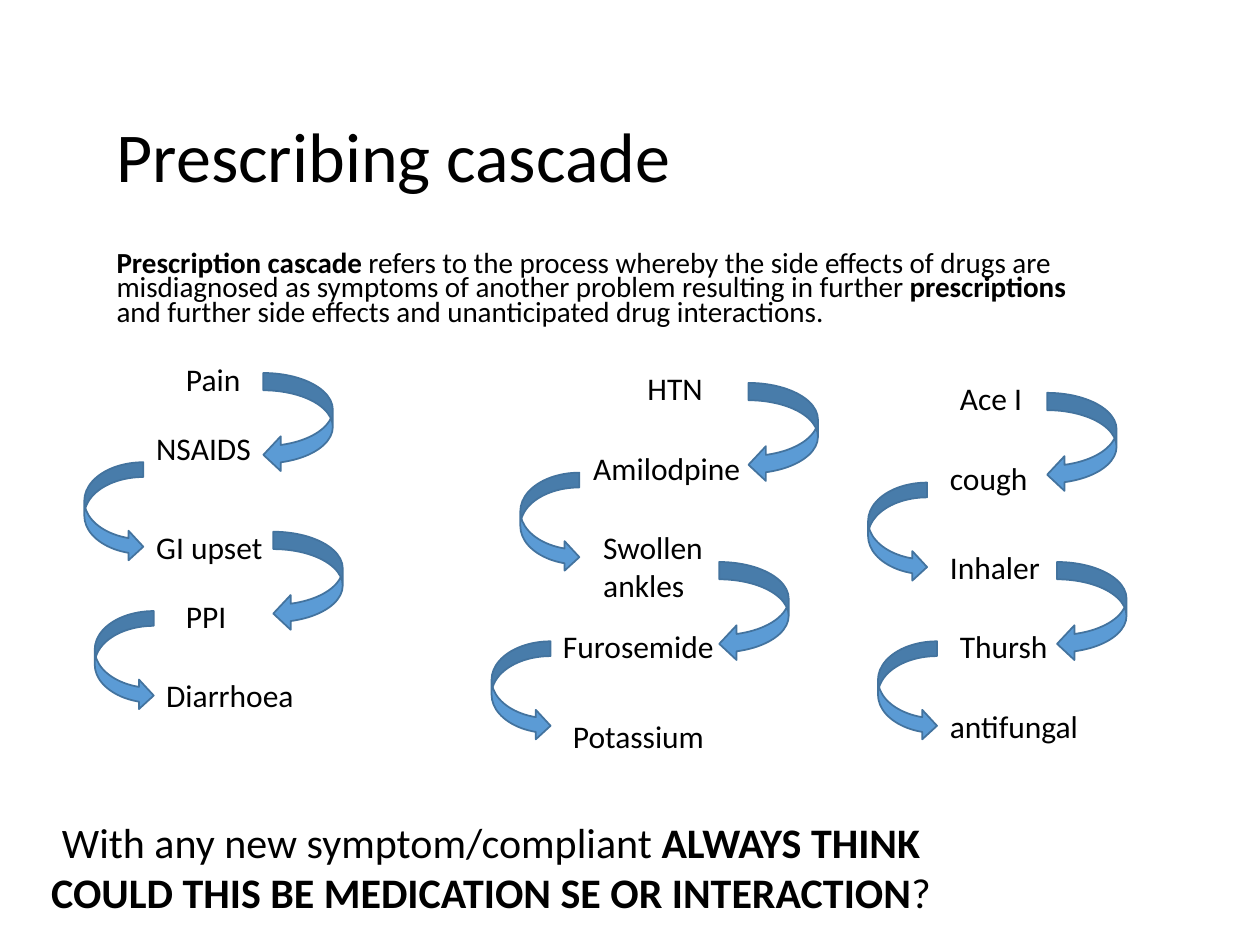
from dataclasses import dataclass

from pptx import Presentation, util as u
from pptx.dml.color import RGBColor
from pptx.enum import shapes, text

BLACK = RGBColor(0, 0, 0)
BLUE = RGBColor(0x5B, 0x9B, 0xD5)
EDGE = RGBColor(0x43, 0x73, 0x9E)
FONT = "Calibri"
ARROW_H = 2.0
LEFT, CENTER = text.PP_ALIGN.LEFT, text.PP_ALIGN.CENTER


@dataclass
class Step:
    """One stage of a cascade; lengths in cm."""
    words: str
    x: float
    y: float
    w: float = 3.8
    h: float = 1.02
    align: text.PP_ALIGN = LEFT


@dataclass
class Turn:
    """A curved arrow from one stage to the next; lengths in cm."""
    x: float
    y: float
    right: bool = False


STEPS = [
    Step("Pain", 3.5, 7.14),
    Step("NSAIDS", 2.9, 8.53, 3.6),
    Step("GI upset", 2.9, 10.52),
    Step("PPI", 3.5, 11.91),
    Step("Diarrhoea", 3.1, 13.51),
    Step("HTN", 11.71, 7.32, align=CENTER),
    Step("Amilodpine", 11.71, 8.92),
    Step("Swollen ankles", 11.91, 10.52, h=1.8),
    Step("Furosemide", 11.1, 12.52),
    Step("Potassium", 11.3, 14.33),
    Step("Ace I", 19.1, 7.52, 2.4),
    Step("cough", 18.9, 9.12, 3.6),
    Step("Inhaler", 18.9, 10.92, 3.2),
    Step("Thursh", 19.1, 12.52, 3.6),
    Step("antifungal", 18.9, 14.12, 3.6),
]

TURNS = [
    Turn(5.31, 7.52), Turn(1.7, 9.32, True),
    Turn(5.51, 10.72), Turn(1.91, 12.32, True),
    Turn(15.09, 7.72), Turn(10.49, 9.53, True),
    Turn(14.5, 11.33), Turn(9.91, 12.93, True),
    Turn(21.11, 7.92), Turn(17.5, 9.73, True),
    Turn(21.31, 11.33), Turn(17.7, 12.93, True),
]


def place(shape, x: float, y: float, w: float, h: float) -> None:
    shape.left, shape.top = u.Cm(x), u.Cm(y)
    shape.width, shape.height = u.Cm(w), u.Cm(h)


def write(para, parts: list[str], size: float, align=LEFT) -> None:
    """Fill a paragraph with parts that alternate plain and bold."""
    para.alignment = align
    for i, part in enumerate(parts):
        if part:
            run = para.add_run()
            run.text = part
            run.font.name, run.font.size = FONT, u.Pt(size)
            run.font.bold = i % 2 == 1
            run.font.color.rgb = BLACK


def add_text(slide, x: float, y: float, w: float, h: float,
             parts: list[str], size: float, align=LEFT):
    box = slide.shapes.add_textbox(u.Cm(x), u.Cm(y), u.Cm(w), u.Cm(h))
    frame = box.text_frame
    frame.word_wrap = True
    write(frame.paragraphs[0], parts, size, align)
    return frame


def add_turn(slide, turn: Turn) -> None:
    kind = shapes.MSO_SHAPE
    form = kind.CURVED_RIGHT_ARROW if turn.right else kind.CURVED_LEFT_ARROW
    width = 1.19 if turn.right else 1.4
    arrow = slide.shapes.add_shape(
        form, u.Cm(turn.x), u.Cm(turn.y), u.Cm(width), u.Cm(ARROW_H))
    arrow.shadow.inherit = False
    arrow.fill.solid()
    arrow.fill.fore_color.rgb = BLUE
    arrow.line.color.rgb = EDGE
    arrow.line.width = u.Pt(1)


def main() -> None:
    deck = Presentation()
    deck.slide_width, deck.slide_height = u.Cm(25.4), u.Cm(19.05)
    slide = deck.slides.add_slide(deck.slide_layouts[5])

    title = slide.shapes.title
    place(title, 2.1, 1.73, 15.6, 2.39)
    title.text_frame.auto_size = text.MSO_AUTO_SIZE.NONE
    title.text_frame.vertical_anchor = text.MSO_ANCHOR.BOTTOM
    head = title.text_frame.paragraphs[0]
    write(head, ["Prescribing cascade"], 40)
    head.line_spacing = 0.9

    intro = add_text(slide, 2.1, 4.52, 20.6, 2.41, [
        "", "Prescription cascade",
        " refers to the process whereby the side effects of drugs are "
        "misdiagnosed as symptoms of another problem resulting in further ",
        "prescriptions",
        " and further side effects and unanticipated drug interactions.",
    ], 16.6)
    intro.margin_top = u.Cm(0.6)
    intro.paragraphs[0].line_spacing = 0.7

    for step in STEPS:
        add_text(slide, step.x, step.y, step.w, step.h,
                 [step.words], 18, step.align)
    for turn in TURNS:
        add_turn(slide, turn)

    add_text(slide, 0.1, 16.33, 19.6, 2.31, [
        "With any new symptom/compliant ",
        "ALWAYS THINK COULD THIS BE MEDICATION SE OR INTERACTION", "?",
    ], 24, CENTER)

    deck.save("out.pptx")


if __name__ == "__main__":
    main()
